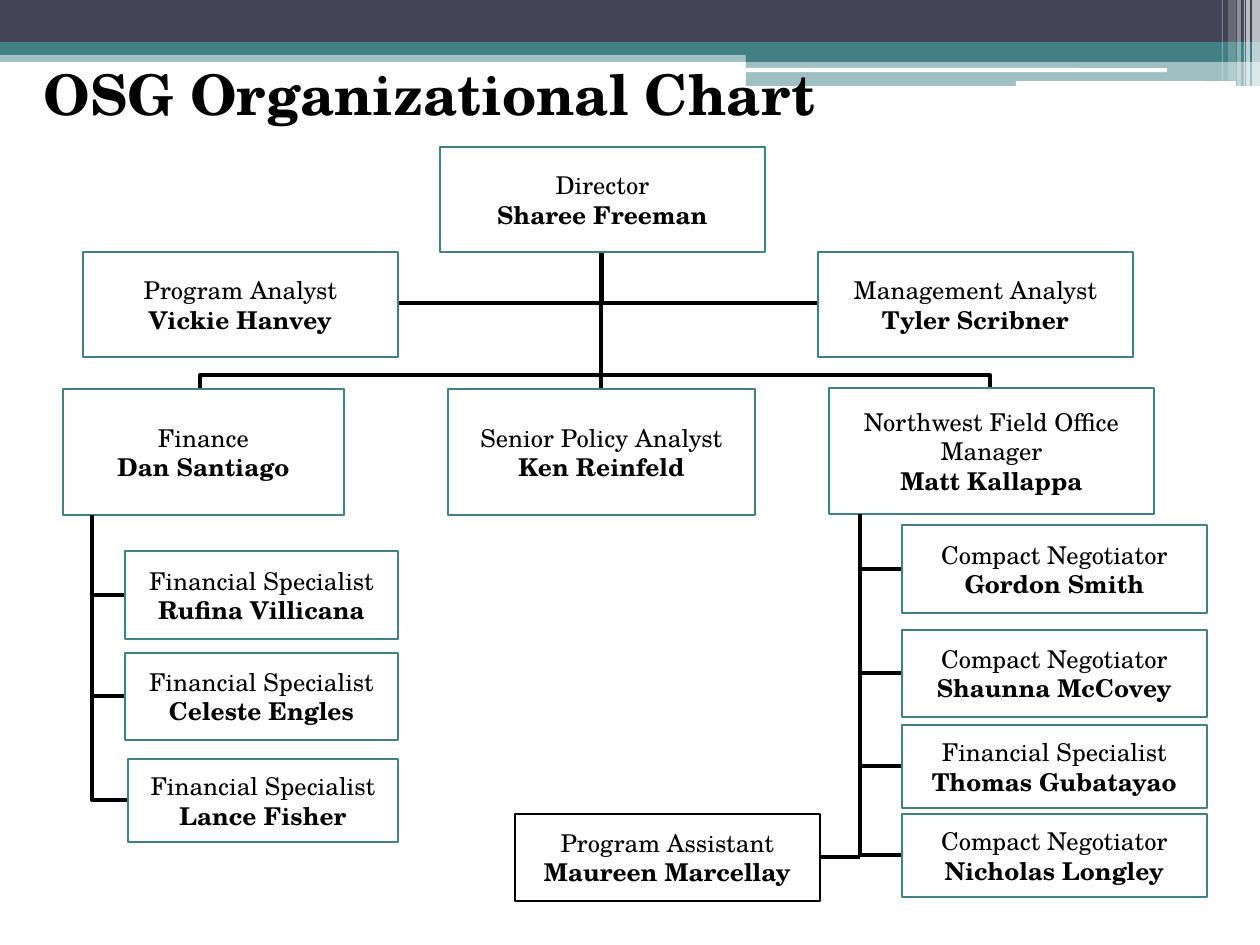
from lxml.etree import SubElement
from pptx import Presentation
from pptx.dml.color import RGBColor
from pptx.enum.shapes import MSO_CONNECTOR, MSO_SHAPE
from pptx.enum.text import MSO_ANCHOR, PP_ALIGN
from pptx.oxml.ns import qn
from pptx.util import Inches, Pt

SCALE = Inches(10) / 1260
FONT = "TeX Gyre Schola"
TEAL, SLATE, WHITE, BLACK = "438086", "424456", "FFFFFF", "000000"

BANDS = [
    ((0, 50, 1260, 12), TEAL, 50),
    ((0, 0, 1260, 42), SLATE, 100),
    ((0, 42, 1260, 13), TEAL, 100),
    ((746, 49, 514, 13), TEAL, 100),
    ((746, 61, 514, 25), TEAL, 50),
]
PILLS = [(745, 68, 422, 4), (1016, 81, 220, 5)]
STRIPES = [
    (1252, 8, 86, 65), (1246, 4, 86, 65), (1244, 1, 86, 60),
    (1237, 4, 86, 40), (1228, 8, 81, 20), (1222, 1, 81, 30),
]
DIRECTOR = ((440, 147, 325, 105), "Director", "Sharee Freeman")
ANALYSTS = [
    ((83, 252, 315, 105), "Program Analyst", "Vickie Hanvey"),
    ((818, 252, 315, 105), "Management Analyst", "Tyler Scribner"),
]
FINANCE = ((63, 389, 281, 126), "Finance", "Dan Santiago")
POLICY = ((448, 389, 307, 126), "Senior Policy Analyst", "Ken Reinfeld")
NORTHWEST = ((829, 388, 325, 126), "Northwest Field Office Manager", "Matt Kallappa")
FINANCE_TEAM = [
    ((125, 551, 273, 88), "Financial Specialist", "Rufina Villicana"),
    ((125, 653, 273, 87), "Financial Specialist", "Celeste Engles"),
    ((128, 759, 270, 83), "Financial Specialist", "Lance Fisher"),
]
NORTHWEST_TEAM = [
    ((902, 525, 305, 88), "Compact Negotiator", "Gordon Smith"),
    ((902, 630, 305, 87), "Compact Negotiator", "Shaunna McCovey"),
    ((902, 725, 305, 83), "Financial Specialist", "Thomas Gubatayao"),
    ((902, 814, 305, 83), "Compact Negotiator", "Nicholas Longley"),
]
ASSISTANT = ((515, 814, 305, 87), "Program Assistant", "Maureen Marcellay")


def px(*lengths):
    """Turn pixel lengths into EMU."""
    return [round(length * SCALE) for length in lengths]


def color(code):
    """Turn a hex string into a colour."""
    return RGBColor.from_string(code)


def set_format(target, values):
    """Set each attribute named in values on target."""
    for name, value in values.items():
        setattr(target, name, value)


def add_span(para, words, size, bold):
    """Add one formatted run to a paragraph."""
    span = para.add_run()
    span.text = words
    set_format(span.font, {"name": FONT, "size": Pt(size), "bold": bold})
    span.font.color.rgb = color(BLACK)


def add_block(page, box, fill, opacity=100, kind=MSO_SHAPE.RECTANGLE):
    """Add a filled shape with no outline or shadow."""
    block = page.shapes.add_shape(kind, *px(*box))
    block.shadow.inherit = False
    block.fill.solid()
    block.fill.fore_color.rgb = color(fill)
    block.line.fill.background()
    if opacity < 100:
        paint = block.fill._xPr.find(".//" + qn("a:srgbClr"))
        SubElement(paint, qn("a:alpha"), val=str(opacity * 1000))
    return block


def add_link(page, start, end):
    """Add a line that leaves start sideways and turns once to reach end."""
    bent = start[0] != end[0] and start[1] != end[1]
    kind = MSO_CONNECTOR.ELBOW if bent else MSO_CONNECTOR.STRAIGHT
    link = page.shapes.add_connector(kind, *px(*start, *end))
    if bent:
        link._element.spPr.find(qn("a:prstGeom")).set("prst", "bentConnector2")
    link.line.color.rgb = color(BLACK)
    link.line.width = Pt(2.25)
    SubElement(link._element.spPr, qn("a:effectLst"))


def add_post(page, post, outline=TEAL):
    """Add a box with a role and the name of its holder."""
    box, role, holder = post
    card = add_block(page, box, WHITE)
    card.line.color.rgb = color(outline)
    card.line.width = Pt(1.5)
    frame = card.text_frame
    set_format(frame, {"word_wrap": True, "vertical_anchor": MSO_ANCHOR.MIDDLE})
    for para, words, bold in (
        (frame.paragraphs[0], role, False),
        (frame.add_paragraph(), holder, True),
    ):
        para.alignment = PP_ALIGN.CENTER
        add_span(para, words, 14, bold)


def draw_header(page):
    """Draw the bands and stripes along the top edge."""
    for box, fill, opacity in BANDS:
        add_block(page, box, fill, opacity)
    for box in PILLS:
        add_block(page, box, WHITE, kind=MSO_SHAPE.ROUNDED_RECTANGLE)
    for left, width, height, opacity in STRIPES:
        add_block(page, (left, 0, width, height), WHITE, opacity)


def draw_title(page, box):
    """Place the title in front of the header."""
    title = page.shapes.title
    set_format(title, dict(zip(("left", "top", "width", "height"), px(*box))))
    frame = title.text_frame
    set_format(frame, {"word_wrap": True, "vertical_anchor": MSO_ANCHOR.TOP})
    para = frame.paragraphs[0]
    para.alignment = PP_ALIGN.LEFT
    add_span(para, "OSG Organizational Chart", 32, True)
    title._element.getparent().append(title._element)


def draw_leaders(page):
    """Draw the director, the analysts and the heads of each branch."""
    left, top, width, height = DIRECTOR[0]
    trunk, bottom, bus = left + width // 2 - 1, top + height, 375
    add_link(page, (trunk, bottom), (trunk, POLICY[0][1]))
    for (left, top, width, height), _, _ in ANALYSTS:
        side = left + width if left < trunk else left
        add_link(page, (side, top + height // 2 - 1), (trunk + 1, bottom))
    for x, head in ((200, FINANCE), (990, NORTHWEST)):
        add_link(page, (trunk, bus), (x, head[0][1]))
    for post in (DIRECTOR, *ANALYSTS, FINANCE, POLICY, NORTHWEST):
        add_post(page, post)


def draw_team(page, head, trunk, members):
    """Draw team members hanging from a trunk below their head."""
    bottom = head[0][1] + head[0][3]
    for member in members:
        left, top, _, height = member[0]
        add_link(page, (left, top + height // 2), (trunk, bottom))
        add_post(page, member)


def draw_assistant(page, trunk):
    """Draw the assistant to the left of a trunk."""
    left, top, width, height = ASSISTANT[0]
    middle = top + height // 2
    add_post(page, ASSISTANT, BLACK)
    add_link(page, (left + width, middle), (trunk, middle))


def main():
    """Build the slide and save the deck."""
    deck = Presentation()
    set_format(deck, {"slide_width": Inches(10), "slide_height": Inches(7.5)})
    page = deck.slides.add_slide(deck.slide_layouts[5])
    draw_header(page)
    draw_leaders(page)
    draw_team(page, FINANCE, 92, FINANCE_TEAM)
    draw_team(page, NORTHWEST, 860, NORTHWEST_TEAM)
    draw_title(page, (31, 53, 1144, 81))
    draw_assistant(page, 860)
    deck.save("out.pptx")


if __name__ == "__main__":
    main()
